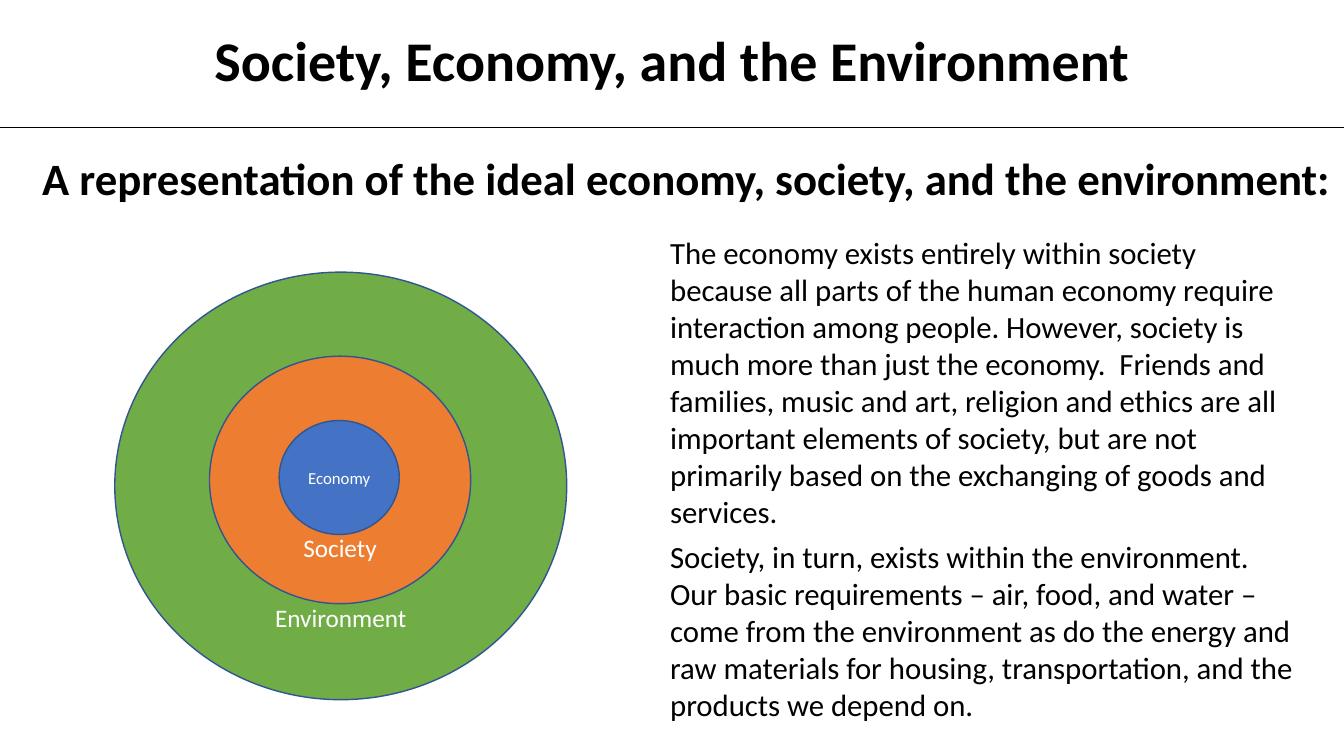
import pptx
import pptx.util
import pptx.dml.color
import pptx.enum.shapes
import pptx.enum.text
import pptx.oxml.ns
import lxml.etree

Pt = pptx.util.Pt
ALIGN = pptx.enum.text.PP_ALIGN
ANCHOR = pptx.enum.text.MSO_ANCHOR

FONT = "Calibri"
BLACK, WHITE, OUTLINE = "000000", "FFFFFF", "325491"
SLIDE_WIDTH, SLIDE_HEIGHT = 960, 540
RULE_TOP = 90.7

heading = "Society, Economy, and the Environment"
subheading = "A representation of the ideal economy, society, and the environment:"
explanation = [
    "The economy exists entirely within society because all parts of the human "
    "economy require interaction among people. However, society is much more than "
    "just the economy.  Friends and families, music and art, religion and ethics "
    "are all important elements of society, but are not primarily based on the "
    "exchanging of goods and services.",
    "Society, in turn, exists within the environment.  Our basic requirements – "
    "air, food, and water – come from the environment as do the energy and raw "
    "materials for housing, transportation, and the products we depend on.",
]
# label, fill, (left, top, width, height), text size, anchor; outermost first
spheres = [
    ("Environment", "70AD47", (82, 194.4, 322.8, 305.4), 18, ANCHOR.BOTTOM),
    ("Society", "ED7D31", (149.6, 254.4, 186.6, 176.8), 18, ANCHOR.BOTTOM),
    ("Economy", "4472C4", (199.4, 300.4, 85.8, 81.4), 12, ANCHOR.MIDDLE),
]


def rgb(value):
    return pptx.dml.color.RGBColor.from_string(value)


def write(frame, paragraphs, size, color=BLACK, bold=False, align=ALIGN.LEFT,
          anchor=ANCHOR.TOP, before=0, spacing=1.0, wrap=True):
    frame.word_wrap = wrap
    frame.vertical_anchor = anchor
    for index, text in enumerate(paragraphs):
        paragraph = frame.add_paragraph() if index else frame.paragraphs[0]
        paragraph.alignment = align
        paragraph.space_before = Pt(before)
        paragraph.line_spacing = spacing
        run = paragraph.add_run()
        run.text = text
        run.font.name = FONT
        run.font.size = Pt(size)
        run.font.bold = bold
        run.font.color.rgb = rgb(color)


def add_text(slide, box, paragraphs, size, **style):
    write(slide.shapes.add_textbox(*map(Pt, box)).text_frame, paragraphs, size, **style)


def add_sphere(slide, label, fill, box, size, anchor):
    sphere = slide.shapes.add_shape(pptx.enum.shapes.MSO_SHAPE.OVAL, *map(Pt, box))
    sphere.shadow.inherit = False
    sphere.fill.solid()
    sphere.fill.fore_color.rgb = rgb(fill)
    sphere.line.color.rgb = rgb(OUTLINE)
    sphere.line.width = Pt(1)
    write(sphere.text_frame, [label], size, color=WHITE, align=ALIGN.CENTER, anchor=anchor)


def add_rule(slide, top):
    rule = slide.shapes.add_connector(
        pptx.enum.shapes.MSO_CONNECTOR.STRAIGHT, 0, Pt(top), Pt(SLIDE_WIDTH), Pt(top))
    rule.line.color.rgb = rgb(BLACK)
    rule.line.width = Pt(0.5)
    lxml.etree.SubElement(rule._element.spPr, pptx.oxml.ns.qn("a:effectLst"))


def main():
    deck = pptx.Presentation()
    deck.slide_width, deck.slide_height = Pt(SLIDE_WIDTH), Pt(SLIDE_HEIGHT)
    slide = deck.slides.add_slide(deck.slide_layouts[6])

    add_text(slide, (23, 108, 990.7, 42.5), [subheading], 32, bold=True,
             anchor=ANCHOR.MIDDLE, spacing=0.9)
    add_text(slide, (471.6, 163.4, 460.8, 360), explanation, 22, before=6)
    for sphere in spheres:
        add_sphere(slide, *sphere)
    add_text(slide, (141.8, 14.4, 676.1, 55.4), [heading], 40, bold=True,
             align=ALIGN.CENTER, before=1, wrap=False)
    add_rule(slide, RULE_TOP)

    deck.save("out.pptx")


if __name__ == "__main__":
    main()
